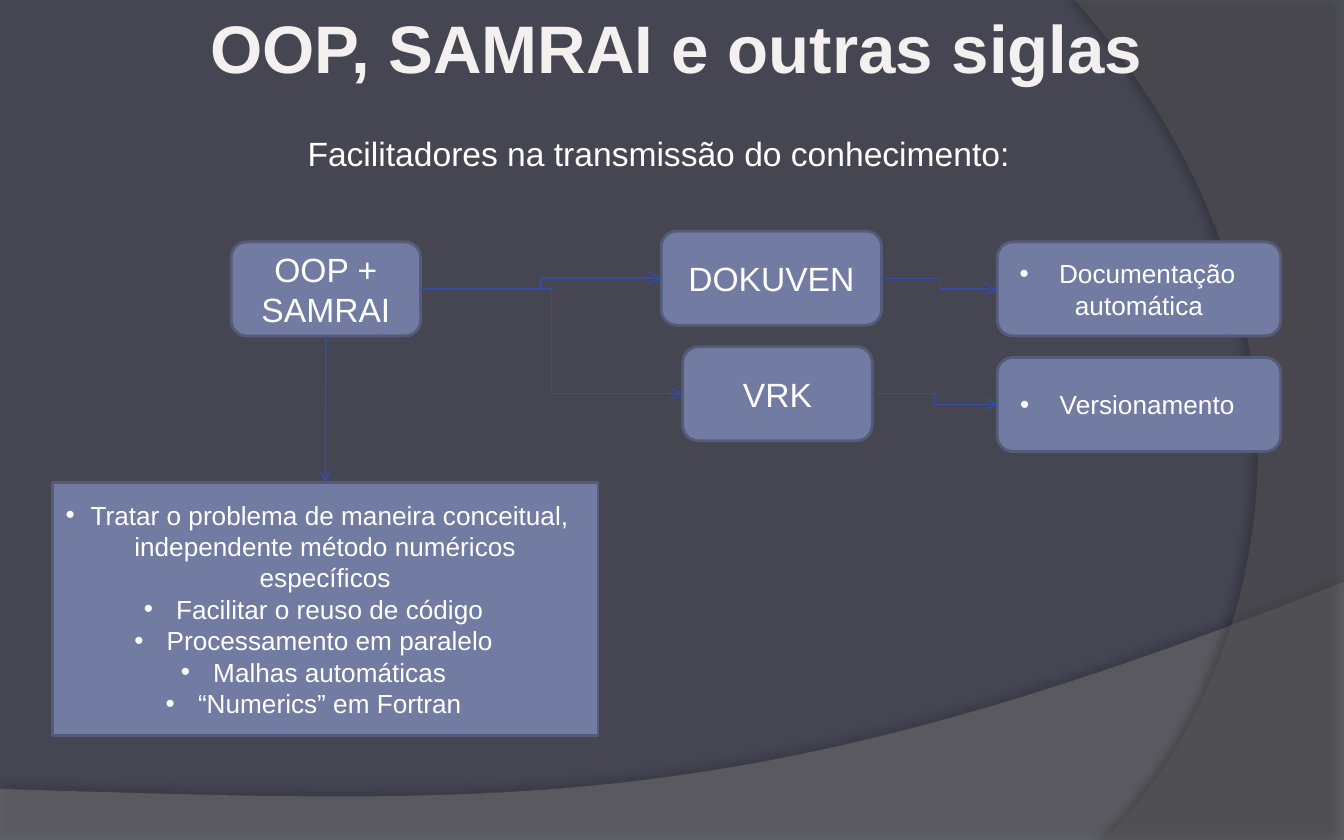
from lxml.etree import SubElement
from pptx import Presentation
from pptx.dml.color import RGBColor
from pptx.enum.shapes import MSO_CONNECTOR, MSO_SHAPE
from pptx.enum.text import MSO_ANCHOR, MSO_AUTO_SIZE, PP_ALIGN
from pptx.oxml.ns import qn
from pptx.util import Inches, Pt

THEME = {
    "font": "Arial", "background": "464653", "title": "F3F0EF", "text": "FFFFFF",
    "fill": "727CA3", "border": "545C79", "arrow": "344CAA",
    "title_size": 36, "body_size": 18, "list_size": 14,
}
TITLE = "OOP, SAMRAI e outras siglas"
SUBTITLE = "Facilitadores na transmissão do conhecimento:"
WAVES = [
    {"color": "7F7F7F", "opacity": 45, "shadow": (35, 3.5, 270),
     "corners": [(0, 5.87), (0, 6.25), (10, 6.25)],
     "curve": [(10, 4.33), (5.59, 6.08), (3.91, 5.99), (0, 5.87)]},
    {"color": "5E5E5E", "opacity": 40, "shadow": (45, 4, 180),
     "corners": [(10, 0), (10, 6.25)],
     "curve": [(8.21, 6.25), (9.35, 5.16), (10.18, 2.5), (8, 0)]},
]
NODES = {
    "core": ((1.72, 1.8, 1.41, 0.7), ["OOP + SAMRAI"]),
    "versioner": ((5.08, 2.58, 1.41, 0.7), ["VRK"]),
    "documenter": ((4.92, 1.72, 1.64, 0.7), ["DOKUVEN"]),
}
LISTS = {
    "benefits": ((0.39, 3.59, 4.06, 1.88), [
        "Tratar o problema de maneira conceitual, independente método numéricos específicos",
        "Facilitar o reuso de código",
        "Processamento em paralelo",
        "Malhas automáticas",
        "“Numerics” em Fortran",
    ]),
    "documentation": ((7.42, 1.8, 2.11, 0.7), [" Documentação automática"]),
    "versioning": ((7.42, 2.66, 2.11, 0.7), [" Versionamento"]),
}
TOP, LEFT, BOTTOM, RIGHT = range(4)
ARROWS = [
    ("core", BOTTOM, "benefits", TOP),
    ("core", RIGHT, "versioner", LEFT),
    ("core", RIGHT, "documenter", LEFT),
    ("documenter", RIGHT, "documentation", LEFT),
    ("versioner", RIGHT, "versioning", LEFT),
]


def color(name):
    return RGBColor.from_string(THEME[name])


def curve_points(points, steps=40):
    weights = (1, 3, 3, 1)
    return [
        tuple(sum(weights[i] * (1 - t) ** (3 - i) * t ** i * point[axis]
                  for i, point in enumerate(points)) for axis in (0, 1))
        for t in (step / steps for step in range(steps + 1))
    ]


def add_wave(page, wave):
    points = [(Inches(x), Inches(y)) for x, y in wave["corners"] + curve_points(wave["curve"])]
    builder = page.shapes.build_freeform(*points[0])
    builder.add_line_segments(points[1:], close=True)
    shape = builder.convert_to_shape()
    shape.fill.solid()
    shape.fill.fore_color.rgb = RGBColor.from_string(wave["color"])
    shape.line.fill.background()
    properties = shape._element.spPr
    tint = properties.find(qn("a:solidFill"))[0]
    SubElement(tint, qn("a:alpha"), val=str(wave["opacity"] * 1000))
    opacity, distance, angle = wave["shadow"]
    effects = SubElement(properties, qn("a:effectLst"))
    shadow = SubElement(effects, qn("a:outerShdw"), blurRad=str(Pt(4)), dist=str(Pt(distance)),
                        dir=str(angle * 60000), algn="ctr", rotWithShape="0")
    shade = SubElement(shadow, qn("a:srgbClr"), val="000000")
    SubElement(shade, qn("a:alpha"), val=str(opacity * 1000))


def add_bullet(para):
    properties = para._p.get_or_add_pPr()
    properties.set("marL", "0")
    properties.set("indent", str(-Inches(0.24)))
    for tag, attributes in (("a:buFont", {"typeface": THEME["font"]}), ("a:buChar", {"char": "•"})):
        mark = properties.makeelement(qn(tag), attributes)
        properties.insert_element_before(mark, "a:tabLst", "a:defRPr", "a:extLst")


def write(frame, lines, size, ink="text", align=PP_ALIGN.CENTER, bold=False, bullets=False):
    for index, line in enumerate(lines):
        para = frame.add_paragraph() if index else frame.paragraphs[0]
        para.text = line
        para.alignment = align
        para.font.name = THEME["font"]
        para.font.size = Pt(THEME[size])
        para.font.bold = bold
        para.font.color.rgb = color(ink)
        if bullets:
            add_bullet(para)


def add_text(page, place, line, size, wrap, **style):
    box = page.shapes.add_textbox(*map(Inches, place))
    box.text_frame.word_wrap = wrap
    box.text_frame.auto_size = MSO_AUTO_SIZE.SHAPE_TO_FIT_TEXT
    write(box.text_frame, [line], size, **style)


def add_box(page, place, lines, size, bullets):
    kind = MSO_SHAPE.RECTANGLE if len(lines) > 1 else MSO_SHAPE.ROUNDED_RECTANGLE
    box = page.shapes.add_shape(kind, *map(Inches, place))
    box.shadow.inherit = False
    box.fill.solid()
    box.fill.fore_color.rgb = color("fill")
    box.line.color.rgb = color("border")
    box.line.width = Pt(1.5)
    box.text_frame.word_wrap = True
    box.text_frame.vertical_anchor = MSO_ANCHOR.MIDDLE
    write(box.text_frame, lines, size, bullets=bullets)
    return box


def add_arrow(page, start, start_side, end, end_side):
    kind = MSO_CONNECTOR.STRAIGHT if start_side == BOTTOM else MSO_CONNECTOR.ELBOW
    arrow = page.shapes.add_connector(kind, 0, 0, 0, 0)
    arrow.begin_connect(start, start_side)
    arrow.end_connect(end, end_side)
    arrow.line.color.rgb = color("arrow")
    arrow.line.width = Pt(0.75)
    SubElement(arrow.line._get_or_add_ln(), qn("a:tailEnd"), type="arrow")
    SubElement(arrow._element.spPr, qn("a:effectLst"))


def main():
    """Build the slide on acronyms that ease the passing on of knowledge."""
    deck = Presentation()
    deck.slide_width, deck.slide_height = Inches(10), Inches(6.25)
    page = deck.slides.add_slide(deck.slide_layouts[6])
    page.background.fill.solid()
    page.background.fill.fore_color.rgb = color("background")
    for wave in WAVES:
        add_wave(page, wave)
    add_text(page, (0.31, 0, 9.45, 0.71), TITLE, "title_size", True, ink="title", bold=True)
    add_text(page, (2.19, 0.94, 5.48, 0.4), SUBTITLE, "body_size", False, align=PP_ALIGN.LEFT)
    boxes = {}
    for group, size, bullets in ((NODES, "body_size", False), (LISTS, "list_size", True)):
        for name, (place, lines) in group.items():
            boxes[name] = add_box(page, place, lines, size, bullets)
    for start, start_side, end, end_side in ARROWS:
        add_arrow(page, boxes[start], start_side, boxes[end], end_side)
    deck.save("out.pptx")


if __name__ == "__main__":
    main()
